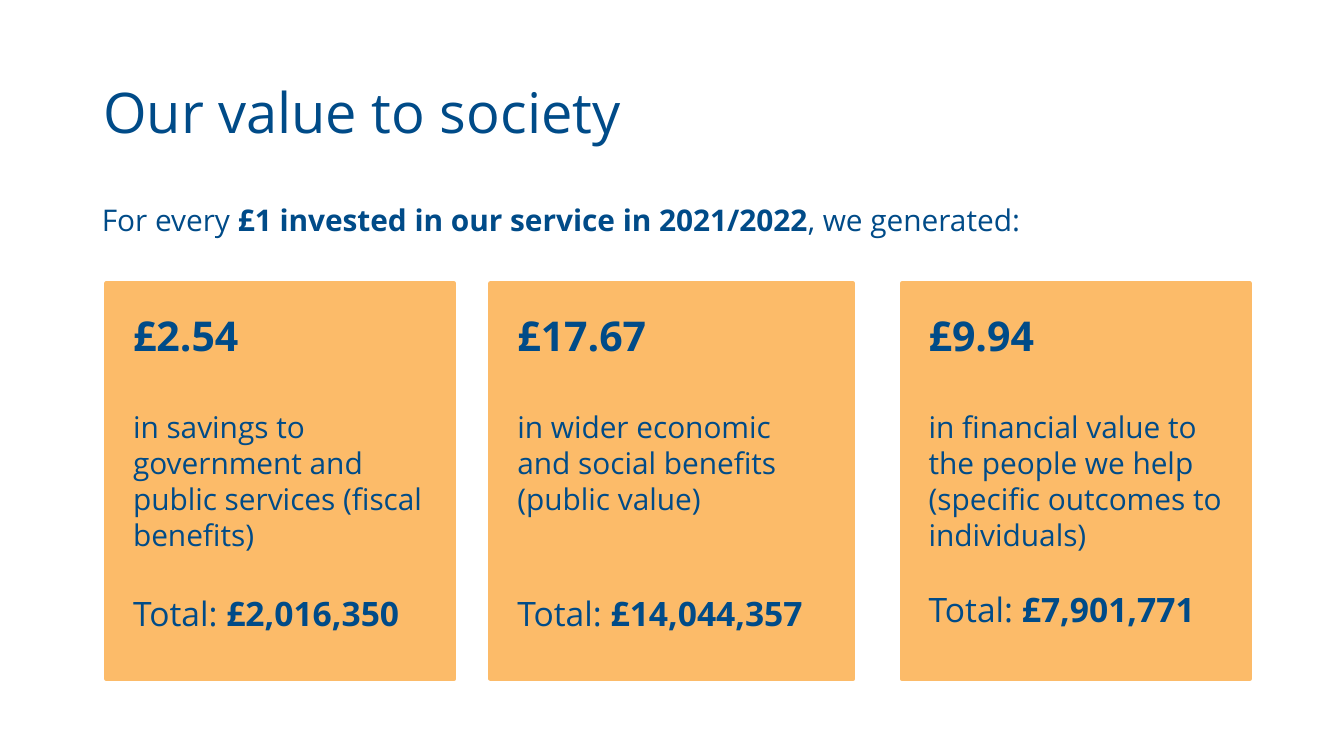
from dataclasses import dataclass

from pptx import Presentation
from pptx.dml.color import RGBColor
from pptx.enum.shapes import MSO_SHAPE
from pptx.enum.text import MSO_ANCHOR, PP_ALIGN
from pptx.util import Inches, Pt


@dataclass(frozen=True)
class Theme:
    font: str = "Open Sans"
    ink: RGBColor = RGBColor(0x00, 0x4B, 0x88)
    card: RGBColor = RGBColor(0xFC, 0xBB, 0x69)
    title: int = 30
    amount: int = 22
    total: int = 18
    body: int = 16


THEME = Theme()
SLIDE_WIDTH = 10
SLIDE_HEIGHT = SLIDE_WIDTH * 9 / 16
CARD_TOP, CARD_HEIGHT = 2.11, 2.94

# left, width, amount, description, gap above the total in points, total
CARDS = [
    (0.79, 2.59, "£2.54",
     "in savings to government and public services (fiscal benefits)",
     21.7, "£2,016,350"),
    (3.65, 2.7, "£17.67",
     "in wider economic and social benefits (public value)",
     41, "£14,044,357"),
    (6.71, 2.59, "£9.94",
     "in financial value to the people we help "
     "(specific outcomes to individuals)",
     19.3, "£7,901,771"),
]


def prepare_frame(frame, inset):
    frame.word_wrap = True
    frame.vertical_anchor = MSO_ANCHOR.TOP
    frame.margin_left = frame.margin_right = Inches(inset)
    frame.margin_top = frame.margin_bottom = Inches(inset)


def fill_paragraph(para, spans, size, spacing=1.0, before=0):
    """Write (text, bold) spans into a left-aligned paragraph."""
    para.alignment = PP_ALIGN.LEFT
    para.line_spacing = spacing
    para.space_before = Pt(before)
    for text, bold in spans:
        span = para.add_run()
        span.text = text
        span.font.name = THEME.font
        span.font.size = Pt(size)
        span.font.bold = bold
        span.font.color.rgb = THEME.ink


def add_text(page, left, top, width, height, spans, size, spacing=1.0):
    box = page.shapes.add_textbox(
        Inches(left), Inches(top), Inches(width), Inches(height))
    prepare_frame(box.text_frame, 0.1)
    fill_paragraph(box.text_frame.paragraphs[0], spans, size, spacing)


def add_card(page, left, width, amount, description, total_gap, total):
    card = page.shapes.add_shape(
        MSO_SHAPE.RECTANGLE, Inches(left), Inches(CARD_TOP),
        Inches(width), Inches(CARD_HEIGHT))
    card.shadow.inherit = False
    card.fill.solid()
    card.fill.fore_color.rgb = THEME.card
    card.line.color.rgb = THEME.card
    card.line.width = Pt(2.25)

    frame = card.text_frame
    prepare_frame(frame, 0.2)
    fill_paragraph(frame.paragraphs[0], [(amount, True)], THEME.amount)
    fill_paragraph(frame.add_paragraph(), [(description, False)],
                   THEME.body, before=26.5)
    fill_paragraph(frame.add_paragraph(), [("Total: ", False), (total, True)],
                   THEME.total, before=total_gap)


def main():
    deck = Presentation()
    deck.slide_width = Inches(SLIDE_WIDTH)
    deck.slide_height = Inches(SLIDE_HEIGHT)
    page = deck.slides.add_slide(deck.slide_layouts[6])

    add_text(page, 0.66, 1.36, 8.65, 0.56,
             [("For every ", False),
              ("£1 invested in our service in 2021/2022", True),
              (", we generated:", False)], THEME.body, spacing=1.15)
    add_text(page, 0.67, 0.48, 8.64, 0.66,
             [("Our value to society", False)], THEME.title)
    for card in CARDS:
        add_card(page, *card)

    deck.save("out.pptx")


if __name__ == "__main__":
    main()
